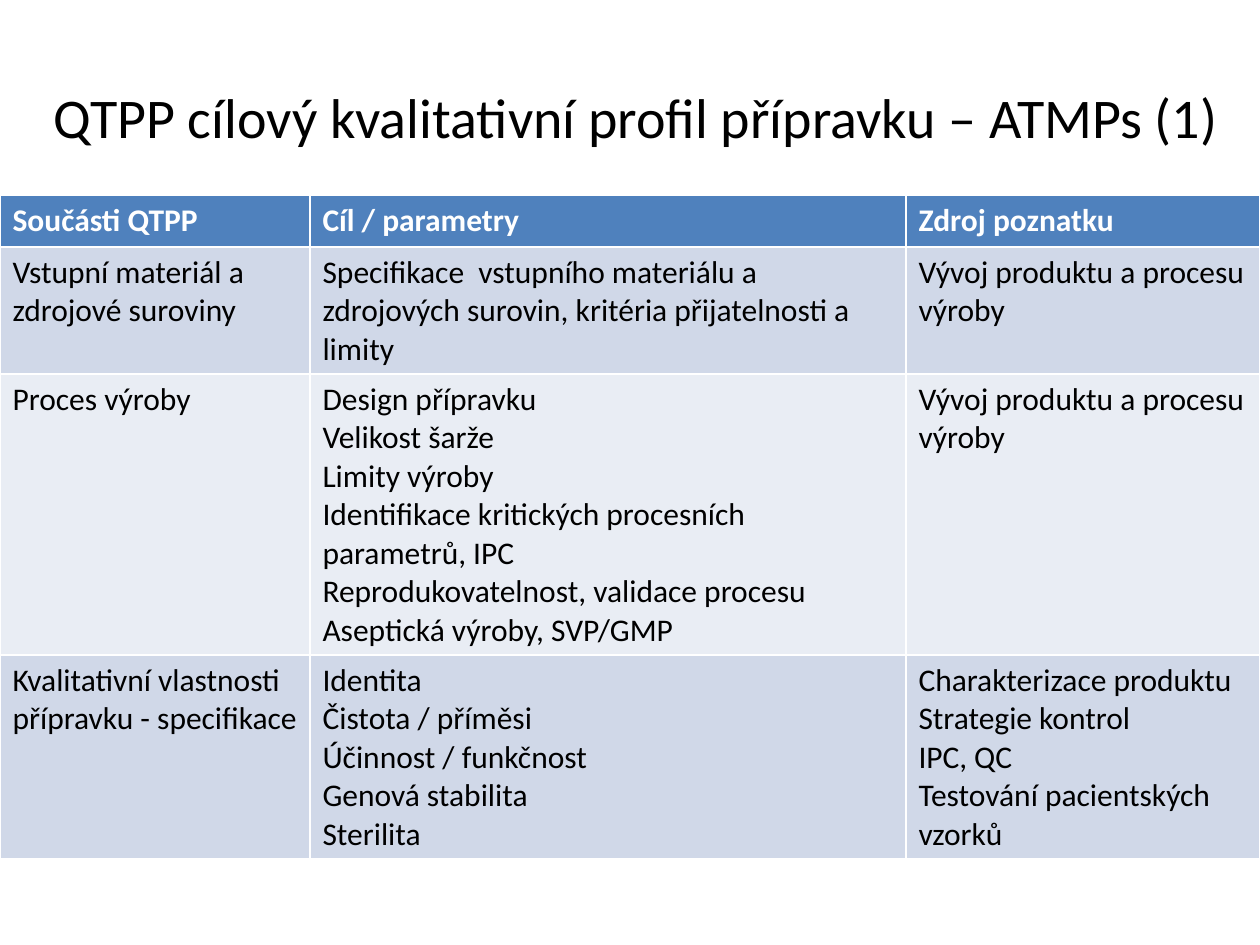
from pptx import Presentation
from pptx.dml.color import RGBColor
from pptx.enum.text import MSO_ANCHOR, PP_ALIGN
from pptx.util import Inches, Pt

MIDDLE = MSO_ANCHOR.MIDDLE
CENTER = PP_ALIGN.CENTER
WIDE, HIGH = Inches(10), Inches(7.5)
FONT = "Calibri"
BLACK, WHITE = "000000", "FFFFFF"
HEAD, BANDS = "4F81BD", ("E9EDF4", "D0D8E8")
TITLE = " QTPP cílový kvalitativní profil přípravku – ATMPs (1)"
SHARES = (0.246, 0.473, 0.281)
HEIGHTS = (0.41, 1.01, 2.23, 1.62)
SOURCE = "Vývoj produktu a procesu výroby"
ROWS = (
    ("Součásti QTPP", "Cíl / parametry", "Zdroj poznatku"),
    (
        "Vstupní materiál a zdrojové suroviny",
        "Specifikace  vstupního materiálu a zdrojových surovin, "
        "kritéria přijatelnosti a limity",
        SOURCE,
    ),
    (
        "Proces výroby",
        "Design přípravku\nVelikost šarže\nLimity výroby\n"
        "Identifikace kritických procesních parametrů, IPC\n"
        "Reprodukovatelnost, validace procesu\nAseptická výroby, SVP/GMP",
        SOURCE,
    ),
    (
        "Kvalitativní vlastnosti přípravku - specifikace",
        "Identita\nČistota / příměsi\nÚčinnost / funkčnost\n"
        "Genová stabilita\nSterilita",
        "Charakterizace produktu\nStrategie kontrol\nIPC, QC\n"
        "Testování pacientských vzorků",
    ),
)


def color(code):
    """Turn a hex string into a colour."""
    return RGBColor.from_string(code)


def write(frame, text, size, code, bold=False):
    """Fill a text frame with one paragraph per line."""
    frame.text = text
    for para in frame.paragraphs:
        font = para.font
        font.name, font.size, font.bold = FONT, Pt(size), bold
        font.color.rgb = color(code)


def add_title(slide, left, top, width, height):
    """Place the centred title in its box."""
    frame = slide.shapes.add_textbox(left, top, width, height).text_frame
    frame.word_wrap = True
    frame.vertical_anchor = MIDDLE
    write(frame, TITLE, 32, BLACK)
    frame.paragraphs[0].alignment = CENTER


def add_grid(slide, left, top, width, height):
    """Place the profile table with a header and banded rows."""
    table = slide.shapes.add_table(
        len(ROWS), len(SHARES), left, top, width, height
    ).table
    for col, share in zip(table.columns, SHARES):
        col.width = int(width * share)
    for i, (row, part) in enumerate(zip(table.rows, HEIGHTS)):
        row.height = int(height * part / sum(HEIGHTS))
        for cell, text in zip(row.cells, ROWS[i]):
            cell.fill.solid()
            cell.fill.fore_color.rgb = color(BANDS[i % 2] if i else HEAD)
            write(cell.text_frame, text, 18, BLACK if i else WHITE, i == 0)


def main():
    """Build and save the slide."""
    deck = Presentation()
    deck.slide_width, deck.slide_height = WIDE, HIGH
    slide = deck.slides.add_slide(deck.slide_layouts[6])
    add_title(slide, 0, Inches(0.3), WIDE, Inches(1.25))
    add_grid(slide, 0, Inches(1.55), WIDE, Inches(sum(HEIGHTS)))
    deck.save("out.pptx")


if __name__ == "__main__":
    main()
